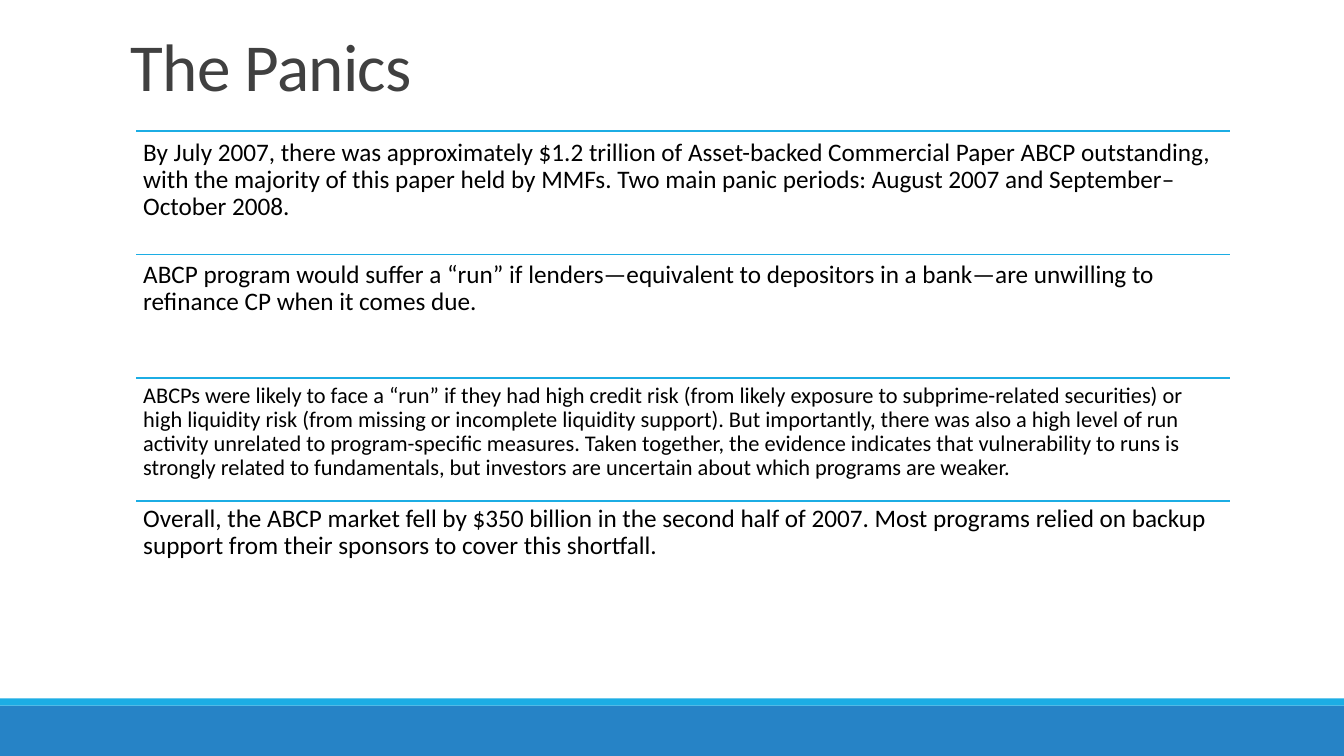
"""Build the slide on the panics in the asset-backed commercial paper market."""
from lxml import etree
from pptx import Presentation
from pptx.dml.color import RGBColor
from pptx.enum.shapes import MSO_CONNECTOR, MSO_SHAPE
from pptx.enum.text import MSO_ANCHOR
from pptx.oxml.ns import qn
from pptx.util import Cm, Pt

STRAIGHT = MSO_CONNECTOR.STRAIGHT
RECTANGLE = MSO_SHAPE.RECTANGLE
TOP = MSO_ANCHOR.TOP

COLORS = {"band": "2683C6", "accent": "1CADE4", "title": "404040", "body": "000000"}

presentation = Presentation()
presentation.slide_width = Cm(33.87)
presentation.slide_height = Cm(19.05)
slide = presentation.slides.add_slide(presentation.slide_layouts[6])


def add_text(text, *, left, top, width, height, size, color, line_spacing,
             side_inset, top_inset, tracking=None):
    """Add a wrapped, top-aligned paragraph."""
    box = slide.shapes.add_textbox(Cm(left), Cm(top), Cm(width), Cm(height))
    frame = box.text_frame
    frame.word_wrap = True
    frame.vertical_anchor = TOP
    frame.margin_left = frame.margin_right = Cm(side_inset)
    frame.margin_top = frame.margin_bottom = Cm(top_inset)
    paragraph = frame.paragraphs[0]
    paragraph.line_spacing = line_spacing
    run = paragraph.add_run()
    run.text = text
    run.font.name = "Calibri"
    run.font.size = Pt(size)
    run.font.color.rgb = RGBColor.from_string(COLORS[color])
    if tracking is not None:
        run.font._element.set("spc", str(int(tracking * 100)))


for color, top, height in [("band", 17.78, 1.27), ("accent", 17.6, 0.18)]:
    footer = slide.shapes.add_shape(RECTANGLE, 0, Cm(top), presentation.slide_width, Cm(height))
    footer.shadow.inherit = False
    footer.fill.solid()
    footer.fill.fore_color.rgb = RGBColor.from_string(COLORS[color])
    footer.line.fill.background()

add_text("The Panics", left=3.05, top=0.79, width=27.94, height=2.51, size=48,
         color="title", line_spacing=0.85, side_inset=0.25, top_inset=0.13, tracking=-0.5)

points = [
    ("By July 2007, there was approximately $1.2 trillion of Asset-backed Commercial Paper "
     "ABCP outstanding, with the majority of this paper held by MMFs. Two main panic periods: "
     "August 2007 and September–October 2008.", 18),
    ("ABCP program would suffer a “run” if lenders—equivalent to depositors in a bank—are "
     "unwilling to refinance CP when it comes due.", 18),
    ("ABCPs were likely to face a “run” if they had high credit risk (from likely exposure to "
     "subprime-related securities) or high liquidity risk (from missing or incomplete "
     "liquidity support). But importantly, there was also a high level of run activity "
     "unrelated to program-specific measures. Taken together, the evidence indicates that "
     "vulnerability to runs is strongly related to fundamentals, but investors are uncertain "
     "about which programs are weaker.", 16),
    ("Overall, the ABCP market fell by $350 billion in the second half of 2007. Most programs "
     "relied on backup support from their sponsors to cover this shortfall.", 18),
]
LEFT, WIDTH = 3.43, 27.56
RULE_TOP, RULE_PITCH = 3.3, 3.11
POINT_TOP, POINT_PITCH = 3.33, 3.08

for index, (point, size) in enumerate(points):
    rule_y = Cm(RULE_TOP + index * RULE_PITCH)
    rule = slide.shapes.add_connector(STRAIGHT, Cm(LEFT), rule_y, Cm(LEFT + WIDTH), rule_y)
    rule.line.color.rgb = RGBColor.from_string(COLORS["accent"])
    rule.line.width = Pt(1.25)
    etree.SubElement(rule._element.spPr, qn("a:effectLst"))
    add_text(point, left=LEFT, top=POINT_TOP + index * POINT_PITCH, width=WIDTH,
             height=POINT_PITCH, size=size, color="body", line_spacing=0.9,
             side_inset=0.18, top_inset=0.18)

presentation.save("out.pptx")
